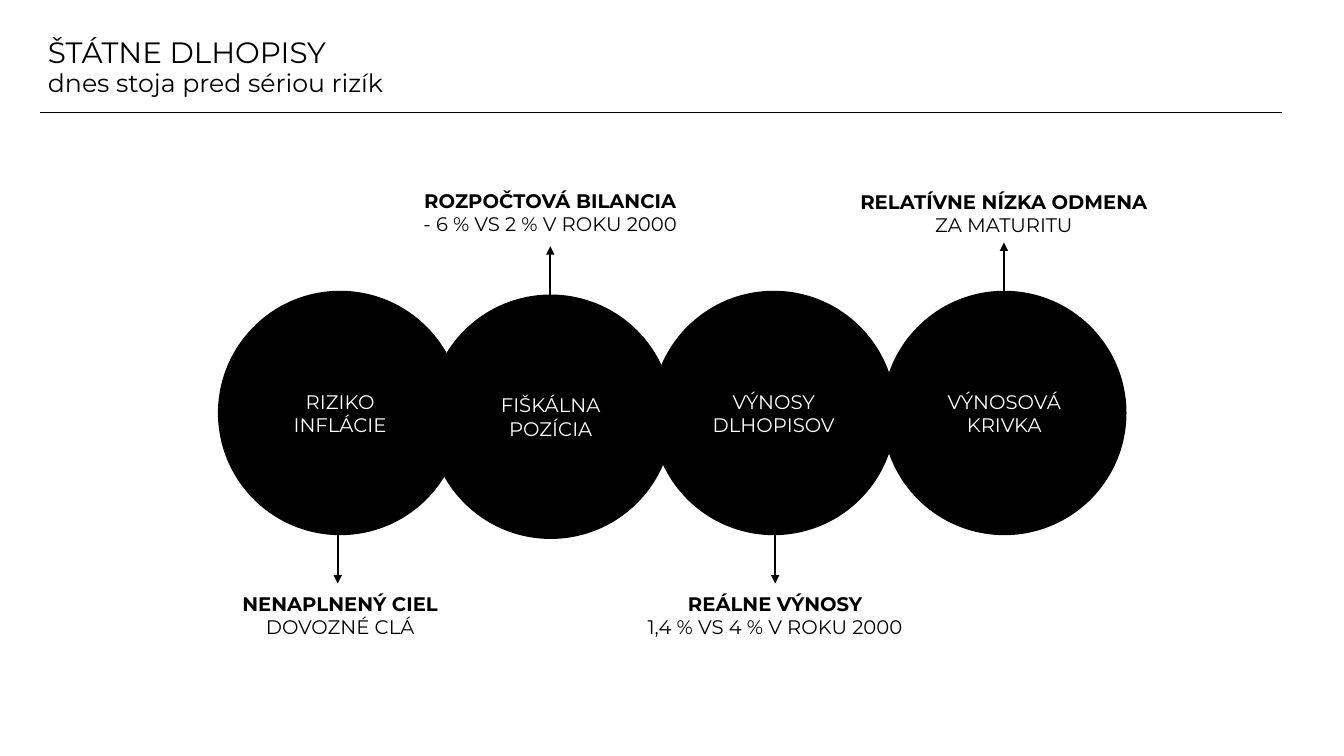
import pptx
import pptx.util
import pptx.dml.color
import pptx.enum.shapes
import pptx.enum.text
import lxml.etree

Pt = pptx.util.Pt
BLACK, WHITE = "000000", "FFFFFF"
FONT = "Montserrat"

TITLE = [("ŠTÁTNE DLHOPISY", 21), ("dnes stoja pred sériou rizík", 18)]
# name, centre x, circle top, arrow x, label side, label width, label top, bold line, plain line
RISKS = [
    ("RIZIKO\nINFLÁCIE", 243, 208.2, 241.2, "below", 181.4, 419,
     "NENAPLNENÝ CIEL", "DOVOZNÉ CLÁ"),
    ("FIŠKÁLNA POZÍCIA", 393.4, 210.9, 393.1, "above", 214.6, 131.1,
     "ROZPOČTOVÁ BILANCIA", "- 6 % VS 2 % V ROKU 2000"),
    ("VÝNOSY DLHOPISOV", 552.7, 208.2, 553.7, "below", 219.6, 419,
     "REÁLNE VÝNOSY", "1,4 % VS 4 % V ROKU 2000"),
    ("VÝNOSOVÁ KRIVKA", 717.4, 208.2, 717.1, "above", 223.2, 131.8,
     "RELATÍVNE NÍZKA ODMENA", "ZA MATURITU"),
]
SIZE, ARROW, LABEL = 173.6, 35, 41.2
LEFT, RIGHT, RULE = 28.8, 915.8, 80.2


def color(text):
    return pptx.dml.color.RGBColor.from_string(text)


def style(par, size, tint, bold=False):
    for run in par.runs:
        run.font.name = FONT
        run.font.size = Pt(size)
        run.font.bold = bold
        run.font.color.rgb = color(tint)


def line(x1, y1, x2, y2, width, arrow=False):
    link = slide.shapes.add_connector(
        pptx.enum.shapes.MSO_CONNECTOR.STRAIGHT, Pt(x1), Pt(y1), Pt(x2), Pt(y2))
    link.line.color.rgb = color(BLACK)
    link.line.width = Pt(width)
    space = "{" + link.element.nsmap["a"] + "}"
    if arrow:
        tail = lxml.etree.SubElement(link.line._get_or_add_ln(), space + "tailEnd")
        tail.set("type", "triangle")
    lxml.etree.SubElement(link.element.spPr, space + "effectLst")


def circle(name, mid, top):
    disc = slide.shapes.add_shape(
        pptx.enum.shapes.MSO_SHAPE.OVAL, Pt(mid - SIZE / 2), Pt(top), Pt(SIZE), Pt(SIZE))
    disc.shadow.inherit = False
    disc.fill.solid()
    disc.fill.fore_color.rgb = color(BLACK)
    disc.line.color.rgb = color(BLACK)
    disc.line.width = Pt(1)
    frame = disc.text_frame
    frame.text = name
    frame.word_wrap = True
    frame.vertical_anchor = pptx.enum.text.MSO_ANCHOR.MIDDLE
    for par in frame.paragraphs:
        par.alignment = pptx.enum.text.PP_ALIGN.CENTER
        style(par, 14, WHITE)


def label(mid, top, width, head, note):
    box = slide.shapes.add_textbox(Pt(mid - width / 2), Pt(top), Pt(width), Pt(LABEL))
    frame = box.text_frame
    frame.text = head + "\n" + note
    frame.word_wrap = True
    for par, bold in zip(frame.paragraphs, (True, False)):
        par.alignment = pptx.enum.text.PP_ALIGN.CENTER
        style(par, 14, BLACK, bold)


deck = pptx.Presentation()
deck.slide_width, deck.slide_height = Pt(960), Pt(540)
slide = deck.slides.add_slide(deck.slide_layouts[5])

title = slide.shapes.title
title.left, title.top = Pt(LEFT), Pt(22.3)
title.width, title.height = Pt(RIGHT - LEFT), Pt(52.6)
frame = title.text_frame
frame.text = "\n".join(text for text, size in TITLE)
frame.word_wrap = True
frame.auto_size = pptx.enum.text.MSO_AUTO_SIZE.NONE
frame.vertical_anchor = pptx.enum.text.MSO_ANCHOR.MIDDLE
frame.margin_left = frame.margin_right = Pt(5.4)
frame.margin_top = frame.margin_bottom = Pt(2.7)
for par, (text, size) in zip(frame.paragraphs, TITLE):
    par.alignment = pptx.enum.text.PP_ALIGN.LEFT
    par.line_spacing = 0.9
    par.space_before = Pt(0)
    style(par, size, BLACK)
line(LEFT, RULE, RIGHT, RULE, 0.5)

for name, mid, top, x, side, width, y, head, note in RISKS:
    circle(name, mid, top)
    start, step = (top, -ARROW) if side == "above" else (top + SIZE, ARROW)
    line(x, start, x, start + step, 1.5, True)
    label(mid if side == "below" and x < mid else x, y, width, head, note)

deck.save("out.pptx")
